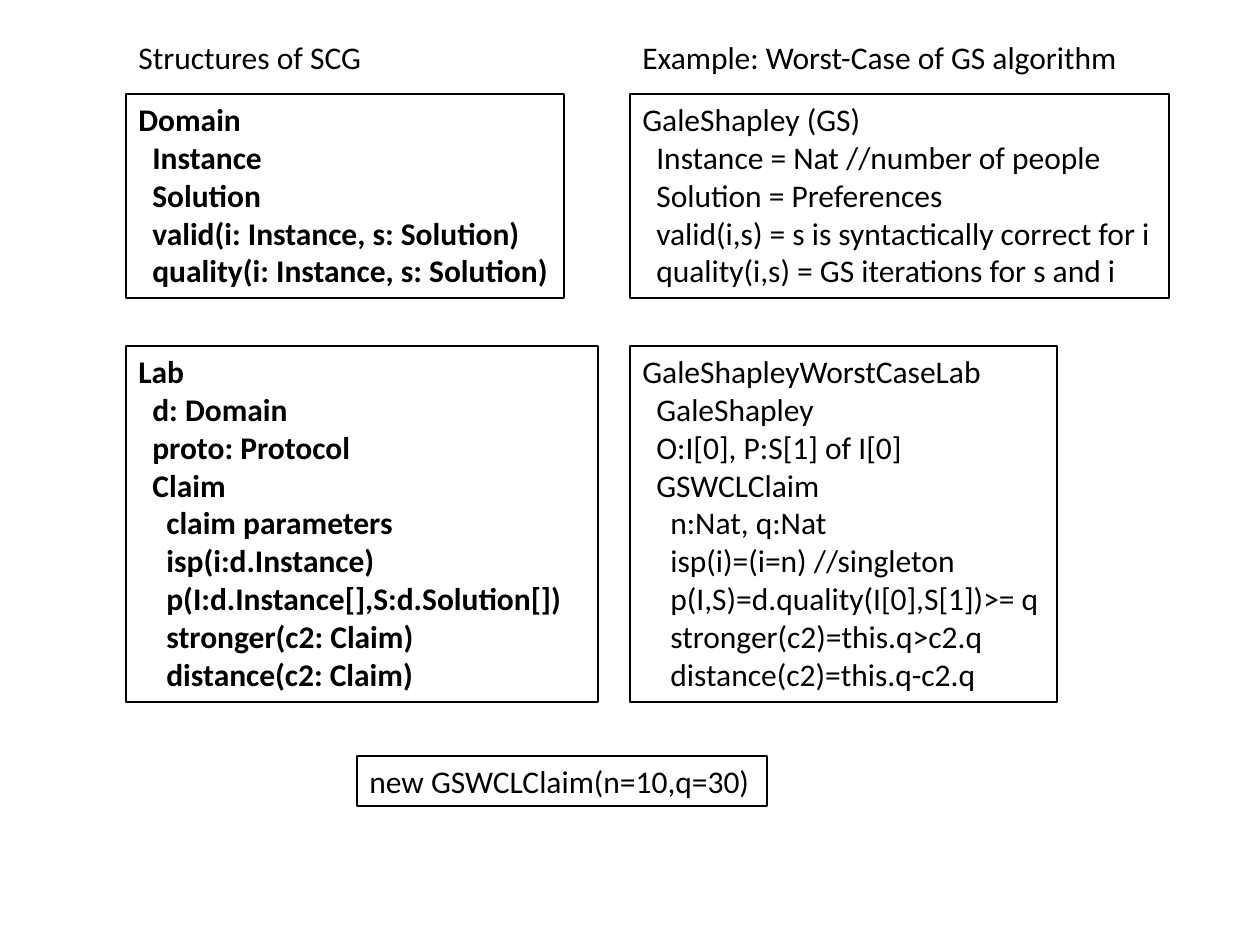
from pptx import Presentation
from pptx.dml.color import RGBColor
from pptx.enum.text import MSO_AUTO_SIZE
from pptx.util import Emu, Pt

FIT = MSO_AUTO_SIZE.SHAPE_TO_FIT_TEXT
COLORS = {"ink": "000000", "page": "FFFFFF"}
FONT = {"name": "Calibri", "size": Pt(18)}
INDENT = 14  # px for each level of nesting
LEFT, RIGHT = 126, 630  # column edges
HEAD, TOP, MID, END = 32, 94, 346, 756  # row edges

# Each line is (nesting level, text)
DOMAIN = [
    (0, "Domain"),
    (1, "Instance"),
    (1, "Solution"),
    (1, "valid(i: Instance, s: Solution)"),
    (1, "quality(i: Instance, s: Solution)"),
]
GALE = [
    (0, "GaleShapley (GS)"),
    (1, "Instance = Nat //number of people"),
    (1, "Solution = Preferences"),
    (1, "valid(i,s) = s is syntactically correct for i"),
    (1, "quality(i,s) = GS iterations for s and i"),
]
LAB = [
    (0, "Lab"),
    (1, "d: Domain"),
    (1, "proto: Protocol"),
    (1, "Claim"),
    (2, "claim parameters"),
    (2, "isp(i:d.Instance)"),
    (2, "p(I:d.Instance[],S:d.Solution[])"),
    (2, "stronger(c2: Claim)"),
    (2, "distance(c2: Claim)"),
]
WORST = [
    (0, "GaleShapleyWorstCaseLab"),
    (1, "GaleShapley"),
    (1, "O:I[0], P:S[1] of I[0]"),
    (1, "GSWCLClaim"),
    (2, "n:Nat, q:Nat"),
    (2, "isp(i)=(i=n) //singleton"),
    (2, "p(I,S)=d.quality(I[0],S[1])>= q"),
    (2, "stronger(c2)=this.q>c2.q"),
    (2, "distance(c2)=this.q-c2.q"),
]


def px(n):
    return Emu(round(n * 914400 / 126))


def color(name):
    return RGBColor.from_string(COLORS[name])


def add_text(slide, box, lines, bold=False, wrap=False):
    """Add a text box with one paragraph per line, indented by level."""
    shape = slide.shapes.add_textbox(*map(px, box))
    frame = shape.text_frame
    for key, value in {"word_wrap": wrap, "auto_size": FIT}.items():
        setattr(frame, key, value)
    for i, (level, text) in enumerate(lines):
        para = frame.add_paragraph() if i else frame.paragraphs[0]
        if level:
            para._p.get_or_add_pPr().set("marL", str(px(level * INDENT)))
        run = para.add_run()
        run.text = text
        for key, value in {**FONT, "bold": bold}.items():
            setattr(run.font, key, value)
        run.font.color.rgb = color("ink")
    return shape


def add_panel(slide, box, lines, **style):
    """Add a text box with a thin outline."""
    line = add_text(slide, box, lines, **style).line
    line.color.rgb = color("ink")
    line.width = Pt(0.75)


def main():
    deck = Presentation()
    deck.slide_width, deck.slide_height = px(1260), px(945)
    slide = deck.slides.add_slide(deck.slide_layouts[6])
    slide.background.fill.solid()
    slide.background.fill.fore_color.rgb = color("page")

    # Column headings
    add_text(slide, (LEFT, HEAD, 251, 50), [(0, "Structures of SCG")])
    add_text(slide, (RIGHT, HEAD, 501, 50),
             [(0, "Example: Worst-Case of GS algorithm")])

    # Structures on the left, their example on the right
    add_panel(slide, (LEFT, TOP, 438, 204), DOMAIN, bold=True)
    add_panel(slide, (RIGHT, TOP, 539, 204), GALE)
    add_panel(slide, (LEFT, MID, 472, 356), LAB, bold=True, wrap=True)
    add_panel(slide, (RIGHT, MID, 427, 356), WORST)

    # Sample claim
    add_panel(slide, (357, END, 410, 50), [(0, "new GSWCLClaim(n=10,q=30)")])

    deck.save("out.pptx")


if __name__ == "__main__":
    main()
